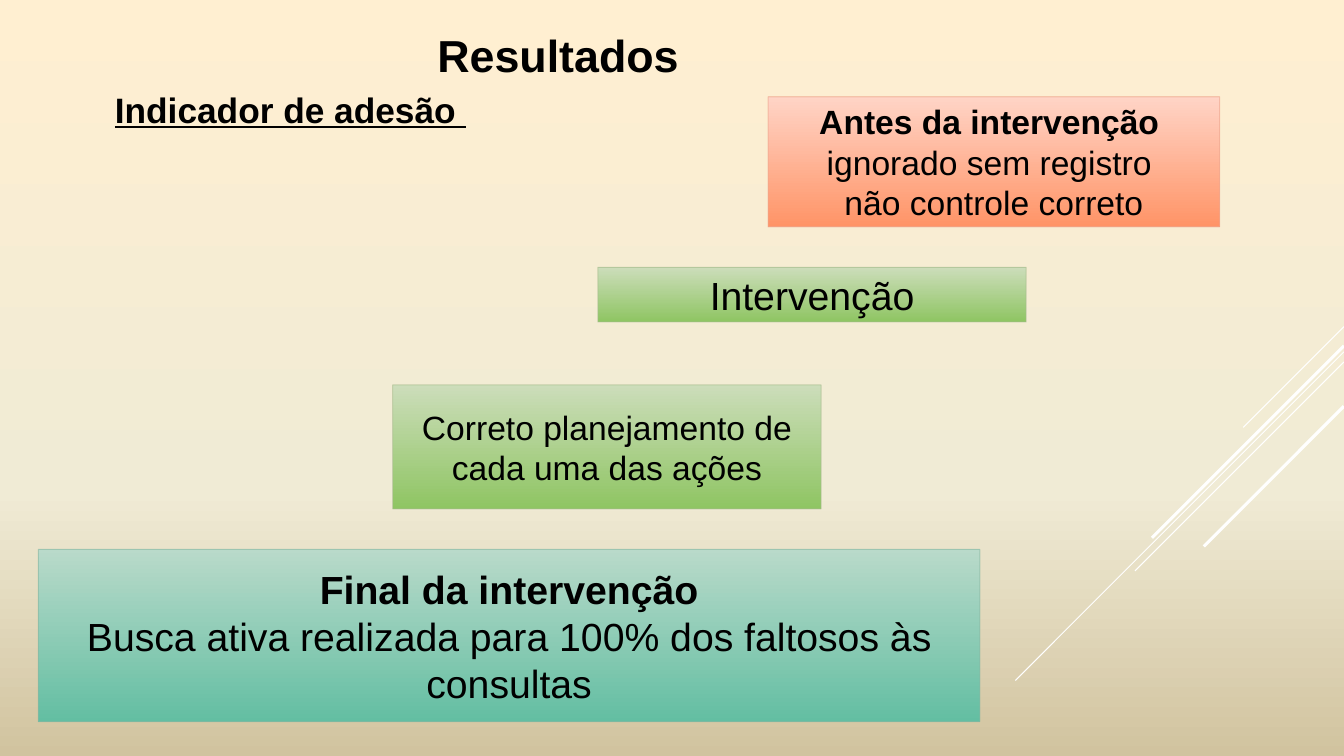
from dataclasses import dataclass

from lxml import etree
from pptx import Presentation
from pptx.dml.color import RGBColor
from pptx.enum import shapes, text
from pptx.oxml import ns
from pptx.util import Pt

Stops = tuple[tuple[int, str], ...]
Box = tuple[float, float, float, float]


@dataclass(frozen=True)
class Theme:
    font: str = "Arial"
    ink: str = "000000"
    ray: str = "FFFFFF"
    heading: float = 32
    subheading: float = 25.2
    large: float = 28
    regular: float = 24
    outline: float = 0.75
    outline_opacity: int = 60
    background: Stops = ((0, "FFEFD1"), (65, "F0EBD5"), (100, "D1C39F"))
    coral: Stops = ((0, "FFD4C6"), (100, "FF9467"))
    coral_edge: str = "EEA78F"
    green: Stops = ((0, "CCDDBA"), (100, "8FC563"))
    green_edge: str = "A4BB8B"
    teal: Stops = ((0, "B9DACA"), (100, "63BEA2"))
    teal_edge: str = "8AB7A1"


@dataclass(frozen=True)
class Stage:
    box: Box
    stops: Stops
    edge: str
    size: float
    body: str
    lead: str = ""


@dataclass(frozen=True)
class Ray:
    top: float
    run: float
    weight: float


THEME = Theme()
WIDTH, HEIGHT = 960, 540

STAGES = (
    Stage((548.6, 69.1, 322.6, 92.9), THEME.coral, THEME.coral_edge, THEME.regular,
          "ignorado sem registro \nnão controle correto", "Antes da intervenção "),
    Stage((27.4, 392.4, 672.5, 123.1), THEME.teal, THEME.teal_edge, THEME.large,
          "Busca ativa realizada para 100% dos faltosos às consultas", "Final da intervenção"),
    Stage((280.5, 275, 306, 88.5), THEME.green, THEME.green_edge, THEME.regular,
          "Correto planejamento de cada uma das ações"),
    Stage((427, 191, 306, 39), THEME.green, THEME.green_edge, THEME.large, "Intervenção"),
)

RAYS = (
    Ray(233.3, 72, 0.75),
    Ray(251.3, 234.7, 0.75),
    Ray(258.5, 149.3, 0.75),
    Ray(247, 137.2, 2.25),
    Ray(290.2, 100.1, 2.25),
)


def paint_gradient(fill, owner, stops: Stops) -> None:
    fill.gradient()
    fill.gradient_angle = 270
    stop_list = owner.xpath(".//a:gsLst")[0]
    for default_stop in list(stop_list):
        stop_list.remove(default_stop)
    for percent, color in stops:
        stop = etree.SubElement(stop_list, ns.qn("a:gs"), pos=str(percent * 1000))
        etree.SubElement(stop, ns.qn("a:srgbClr"), val=color)


def write(frame, words: str, *, size: float, bold: bool = False, underline: bool = False,
          align=text.PP_ALIGN.CENTER, anchor=text.MSO_ANCHOR.MIDDLE, append: bool = False) -> None:
    frame.word_wrap = True
    frame.auto_size = text.MSO_AUTO_SIZE.NONE
    frame.vertical_anchor = anchor
    for index, line in enumerate(words.split("\n")):
        paragraph = frame.add_paragraph() if append or index else frame.paragraphs[0]
        paragraph.alignment = align
        run = paragraph.add_run()
        run.text = line
        run.font.name = THEME.font
        run.font.size = Pt(size)
        run.font.bold = bold
        run.font.underline = underline
        run.font.color.rgb = RGBColor.from_string(THEME.ink)


def draw_ray(slide, ray: Ray) -> None:
    streak = slide.shapes.add_connector(
        shapes.MSO_CONNECTOR.STRAIGHT, Pt(WIDTH), Pt(ray.top),
        Pt(WIDTH - ray.run), Pt(ray.top + ray.run))
    streak.line.color.rgb = RGBColor.from_string(THEME.ray)
    streak.line.width = Pt(ray.weight)
    etree.SubElement(streak.element.spPr, ns.qn("a:effectLst"))


def draw_stage(slide, stage: Stage) -> None:
    panel = slide.shapes.add_shape(shapes.MSO_SHAPE.RECTANGLE, *map(Pt, stage.box))
    panel.shadow.inherit = False
    paint_gradient(panel.fill, panel.element, stage.stops)
    panel.line.color.rgb = RGBColor.from_string(stage.edge)
    panel.line.width = Pt(THEME.outline)
    edge_color = panel.element.xpath(".//a:ln//a:srgbClr")[0]
    etree.SubElement(edge_color, ns.qn("a:alpha"), val=str(THEME.outline_opacity * 1000))
    if stage.lead:
        write(panel.text_frame, stage.lead, size=stage.size, bold=True)
    write(panel.text_frame, stage.body, size=stage.size, append=bool(stage.lead))


def main() -> None:
    deck = Presentation()
    deck.slide_width, deck.slide_height = Pt(WIDTH), Pt(HEIGHT)
    slide = deck.slides.add_slide(deck.slide_layouts[5])
    paint_gradient(slide.background.fill, slide.element, THEME.background)

    indicator = slide.shapes.title
    indicator.left, indicator.top, indicator.width, indicator.height = map(
        Pt, (27.4, 64.1, 360, 27.4))
    write(indicator.text_frame, "Indicador de adesão ", size=THEME.subheading,
          bold=True, underline=True)

    for ray in RAYS:
        draw_ray(slide, ray)
    for stage in STAGES:
        draw_stage(slide, stage)

    results = slide.shapes.add_textbox(*map(Pt, (305.3, 16.6, 213.8, 46.1)))
    write(results.text_frame, "Resultados", size=THEME.heading, bold=True,
          align=text.PP_ALIGN.LEFT, anchor=text.MSO_ANCHOR.TOP)

    deck.save("out.pptx")


if __name__ == "__main__":
    main()
